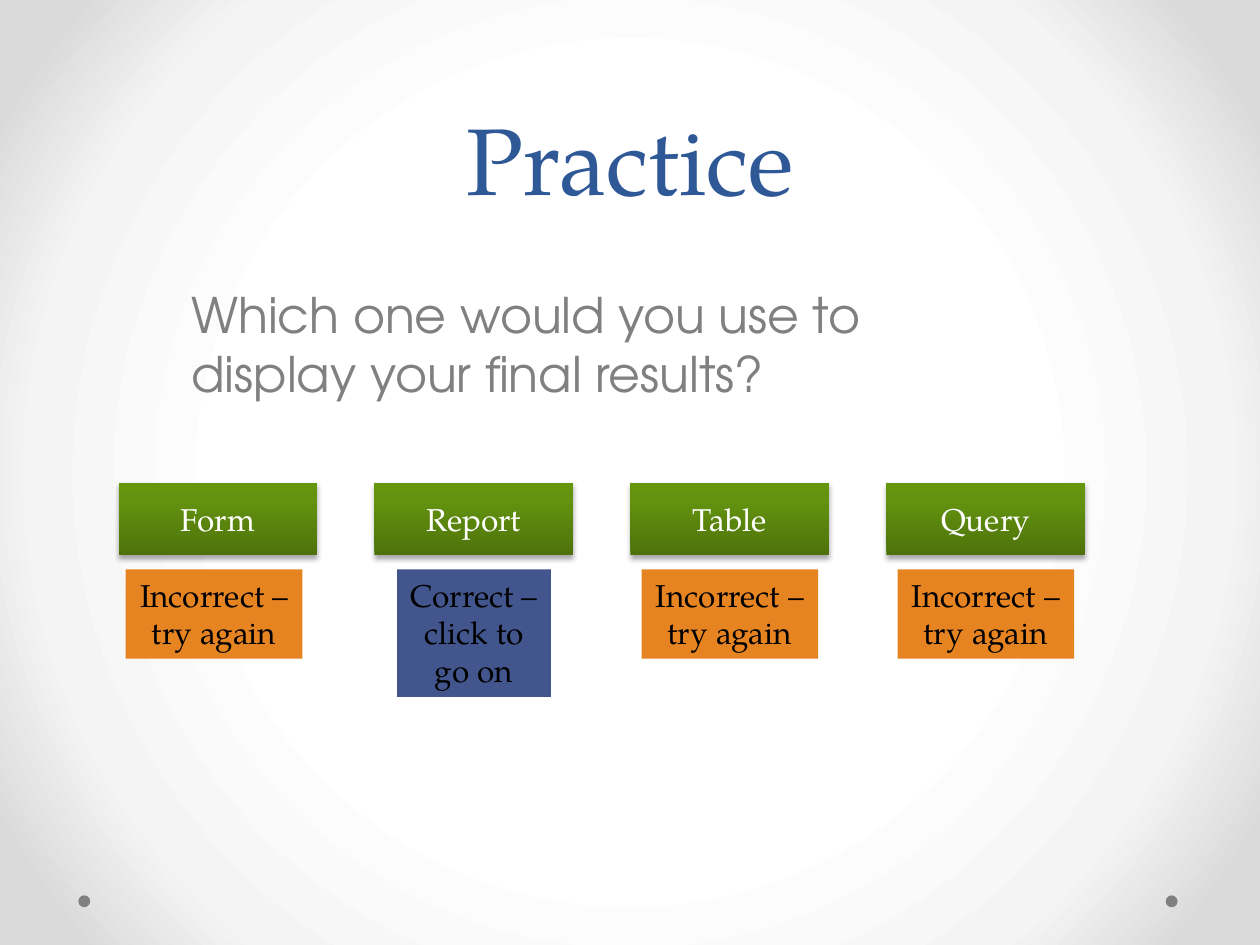
from lxml import etree
from pptx import Presentation
from pptx.dml.color import RGBColor
from pptx.enum.shapes import MSO_SHAPE
from pptx.enum.text import MSO_ANCHOR, MSO_AUTO_SIZE, PP_ALIGN
from pptx.oxml.ns import qn
from pptx.util import Cm, Pt

RECTANGLE, OVAL = MSO_SHAPE.RECTANGLE, MSO_SHAPE.OVAL
LEFT, CENTER = PP_ALIGN.LEFT, PP_ALIGN.CENTER
TOP, MIDDLE, BOTTOM = MSO_ANCHOR.TOP, MSO_ANCHOR.MIDDLE, MSO_ANCHOR.BOTTOM
FIXED, GROW = MSO_AUTO_SIZE.NONE, MSO_AUTO_SIZE.SHAPE_TO_FIT_TEXT

SERIF, SANS = "TeX Gyre Pagella", "TeX Gyre Adventor"
BLUE, GRAY, ORANGE, INDIGO = "2F5897", "808080", "E68422", "42568D"
WHITE, BLACK = "FFFFFF", "000000"
BACKDROP_STOPS = [(50, "FFFFFF"), (76, "F4F4F4"), (92, "DADADA")]
BUTTON_STOPS = [(0, "4D720B"), (80, "64940F"), (100, "65970C")]

TITLE = {
    "frame": {"vertical_anchor": BOTTOM},
    "paragraph": {"alignment": CENTER, "line_spacing": Pt(58)},
    "font": {"name": SERIF, "size": Pt(54)},
}
QUESTION = {
    "frame": {"vertical_anchor": TOP},
    "paragraph": {"alignment": LEFT, "space_before": Pt(5.6)},
    "font": {"name": SANS, "size": Pt(28)},
}
BUTTON = {
    "frame": {"vertical_anchor": MIDDLE, "auto_size": FIXED},
    "paragraph": {"alignment": CENTER},
    "font": {"name": SERIF, "size": Pt(18)},
}
FEEDBACK = {**BUTTON, "frame": {"vertical_anchor": TOP, "auto_size": GROW}}

WRONG = ("Incorrect – try again", ORANGE, 3.56, 1.8)
RIGHT = ("Correct – click to go on", INDIGO, 3.1, 2.57)
ANSWERS = [("Form", WRONG, -0.08), ("Report", RIGHT, 0),
           ("Table", WRONG, 0), ("Query", WRONG, 0)]
BUTTON_LEFT, BUTTON_STEP = 2.39, 5.16
BUTTON_WIDTH, BUTTON_HEIGHT = 4.01, 1.47
BUTTON_TOP, FEEDBACK_TOP = 9.73, 11.48


def rgb(color):
    return RGBColor.from_string(color)


def add_node(parent, tag, **attributes):
    values = {key: str(value) for key, value in attributes.items()}
    return etree.SubElement(parent, qn(tag), values)


def set_gradient(fill, holder, stops):
    fill.gradient()
    gradient = next(holder.iter(qn("a:gradFill")))
    for child in list(gradient):
        gradient.remove(child)
    stop_list = add_node(gradient, "a:gsLst")
    for position, color in stops:
        stop = add_node(stop_list, "a:gs", pos=position * 1000)
        add_node(stop, "a:srgbClr", val=color)
    return gradient


def paint_backdrop(slide):
    gradient = set_gradient(slide.background.fill, slide.element, BACKDROP_STOPS)
    circle = add_node(gradient, "a:path", path="circle")
    add_node(circle, "a:fillToRect", l=50000, t=50000, r=50000, b=50000)


def write(shape, text, style, color):
    frame = shape.text_frame
    frame.word_wrap = True
    frame.text = text
    paragraph = frame.paragraphs[0]
    font = paragraph.runs[0].font
    for part, target in (("frame", frame), ("paragraph", paragraph), ("font", font)):
        for key, value in style[part].items():
            setattr(target, key, value)
    font.color.rgb = rgb(color)


def add_heading(slide, box, text, style, color):
    heading = slide.shapes.add_textbox(*map(Cm, box))
    write(heading, text, style, color)


def add_block(slide, kind, box):
    block = slide.shapes.add_shape(kind, *map(Cm, box))
    block.shadow.inherit = False
    block.line.fill.background()
    return block


def add_plain_block(slide, kind, box, color):
    block = add_block(slide, kind, box)
    block.fill.solid()
    block.fill.fore_color.rgb = rgb(color)
    return block


def add_button(slide, box, label):
    button = add_block(slide, RECTANGLE, box)
    gradient = set_gradient(button.fill, button.element, BUTTON_STOPS)
    add_node(gradient, "a:lin", ang=270 * 60000, scaled=0)
    effects = next(button.element.iter(qn("a:effectLst")))
    shadow = add_node(effects, "a:outerShdw", blurRad=Pt(3.1), dist=Pt(1.8),
                      dir=90 * 60000, rotWithShape=0)
    shade = add_node(shadow, "a:srgbClr", val=BLACK)
    add_node(shade, "a:alpha", val=35000)
    write(button, label, BUTTON, WHITE)


def add_answer(slide, column, label, feedback, shift):
    left = BUTTON_LEFT + column * BUTTON_STEP
    add_button(slide, (left, BUTTON_TOP, BUTTON_WIDTH, BUTTON_HEIGHT), label)
    message, color, width, height = feedback
    feedback_left = left + (BUTTON_WIDTH - width) / 2 + shift
    note = add_plain_block(slide, RECTANGLE,
                           (feedback_left, FEEDBACK_TOP, width, height), color)
    write(note, message, FEEDBACK, BLACK)


def main():
    deck = Presentation()
    deck.slide_width, deck.slide_height = Cm(25.4), Cm(19.05)
    slide = deck.slides.add_slide(deck.slide_layouts[6])
    paint_backdrop(slide)
    for dot_left in (23.5, 1.58):
        add_plain_block(slide, OVAL, (dot_left, 18.05, 0.24, 0.24), GRAY)
    add_heading(slide, (1.27, 0, 22.86, 4.45), "Practice", TITLE, BLUE)
    add_heading(slide, (3.61, 5.61, 17.35, 2.97),
                "Which one would you use to display your final results?",
                QUESTION, GRAY)
    for column, answer in enumerate(ANSWERS):
        add_answer(slide, column, *answer)
    deck.save("out.pptx")


if __name__ == "__main__":
    main()
